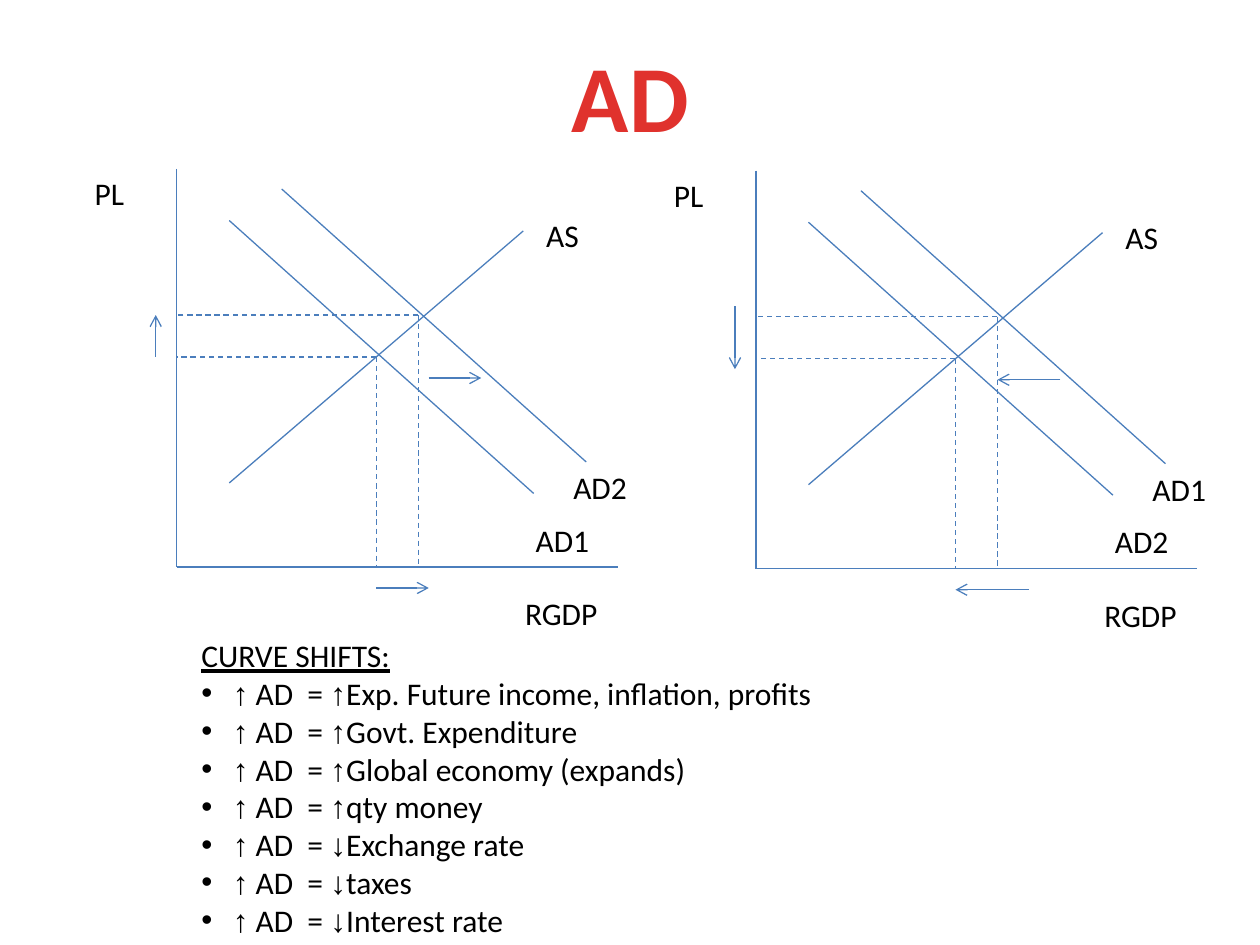
from itertools import groupby
from lxml import etree
from pptx import Presentation
from pptx import util as u
from pptx.dml.color import RGBColor
from pptx.enum import dml, shapes, text
from pptx.oxml.ns import qn

COLORS = {"title": "E0322D", "text": "000000", "line": "4B7EBC"}
ARROWS = "↑↓"

# Content: (name, left, top, width) of the fixed labels, in points
AXIS_LABELS = [("PL", 47, 96, 32), ("AS", 305, 120, 33), ("RGDP", 293, 336, 56)]
DEMAND_PLACES = [(299, 294, 45), (320.5, 264, 45)]  # inner curve, outer curve
SOLID_LINES = [
    (101, 96.5, 101, 324), (101, 324, 353, 324),    # axes
    (131, 126, 305, 282), (161, 108, 335, 264),     # demand curves
    (131, 276, 299, 132),                           # supply curve
]
EQUILIBRIA = [(215, 204), (239, 180)]
GRAPHS = [
    {"offset": (0, 0), "demand": ["AD1", "AD2"],
     "arrows": [(245, 216, 275, 216), (89, 204, 89, 180), (215, 336, 245, 336)]},
    {"offset": (331, 1), "demand": ["AD2", "AD1"],
     "arrows": [(275, 216, 239, 216), (89, 174, 89, 210), (257, 336, 215, 336)]},
]
SHIFTS_HEADING = "CURVE SHIFTS:"
SHIFTS = [
    "↑Exp. Future income, inflation, profits", "↑Govt. Expenditure",
    "↑Global economy (expands)", "↑qty money", "↓Exchange rate", "↓taxes",
    "↓Interest rate",
]


def write(para, words, size=18, color="text", bold=False, underline=False,
          bullet=False, spacing=None, align=text.PP_ALIGN.LEFT):
    para.alignment = align
    if bullet:
        properties = para._p.get_or_add_pPr()
        properties.set("marL", str(u.Pt(18)))
        properties.set("indent", str(-u.Pt(18)))
        etree.SubElement(properties, qn("a:buFont")).set("typeface", "Arial")
        etree.SubElement(properties, qn("a:buChar")).set("char", "•")
    for is_arrow, letters in groupby(words, lambda letter: letter in ARROWS):
        span = para.add_run()
        span.text = "".join(letters)
        font = span.font
        font.name = "Arial" if is_arrow else "Calibri"
        font.size, font.bold, font.underline = u.Pt(size), bold, underline
        font.color.rgb = RGBColor.from_string(COLORS[color])
        if spacing:
            span._r.get_or_add_rPr().set("spc", str(int(spacing * 100)))


def place(box, left, top, width, height):
    box.left, box.top, box.width, box.height = map(u.Pt, (left, top, width, height))
    frame = box.text_frame
    frame.word_wrap = False
    frame.auto_size = text.MSO_AUTO_SIZE.SHAPE_TO_FIT_TEXT
    frame.vertical_anchor = text.MSO_ANCHOR.TOP
    return frame


def add_box(page, left, top, width, height):
    return place(page.shapes.add_textbox(0, 0, 0, 0), left, top, width, height)


def add_line(page, ends, offset, dashed=False, arrow=False):
    dx, dy = offset
    x1, y1, x2, y2 = ends
    line = page.shapes.add_connector(
        shapes.MSO_CONNECTOR.STRAIGHT,
        u.Pt(x1 + dx), u.Pt(y1 + dy), u.Pt(x2 + dx), u.Pt(y2 + dy))
    line.line.color.rgb = RGBColor.from_string(COLORS["line"])
    line.line.width = u.Pt(0.75)
    if dashed:
        line.line.dash_style = dml.MSO_LINE.DASH
    if arrow:
        outline = line.line._get_or_add_ln()
        etree.SubElement(outline, qn("a:tailEnd")).set("type", "arrow")
    etree.SubElement(line._element.spPr, qn("a:effectLst"))


def add_graph(page, offset, demand, arrows):
    for ends in SOLID_LINES:
        add_line(page, ends, offset)
    # Dashed guides from each equilibrium to both axes
    for x, y in EQUILIBRIA:
        add_line(page, (x, y, 101, y), offset, dashed=True)
        add_line(page, (x, y, x, 324), offset, dashed=True)
    for ends in arrows:
        add_line(page, ends, offset, arrow=True)
    curves = [(name, *spot) for name, spot in zip(demand, DEMAND_PLACES)]
    for name, left, top, width in AXIS_LABELS + curves:
        frame = add_box(page, left + offset[0], top + offset[1], width, 29)
        write(frame.paragraphs[0], name)


def main():
    deck = Presentation()
    deck.slide_width, deck.slide_height = u.Pt(720), u.Pt(540)
    page = deck.slides.add_slide(deck.slide_layouts[5])

    # Title
    frame = place(page.shapes.title, 318.5, 18, 83, 73)
    write(frame.paragraphs[0], "AD", size=54, color="title", bold=True,
          spacing=0.5, align=text.PP_ALIGN.CENTER)

    # Demand rising on the left, falling on the right
    for graph in GRAPHS:
        add_graph(page, **graph)

    # List of causes
    frame = add_box(page, 108, 360, 368, 181.5)
    write(frame.paragraphs[0], SHIFTS_HEADING, underline=True)
    for cause in SHIFTS:
        write(frame.add_paragraph(), "↑ AD  = " + cause, bullet=True)

    deck.save("out.pptx")


if __name__ == "__main__":
    main()
